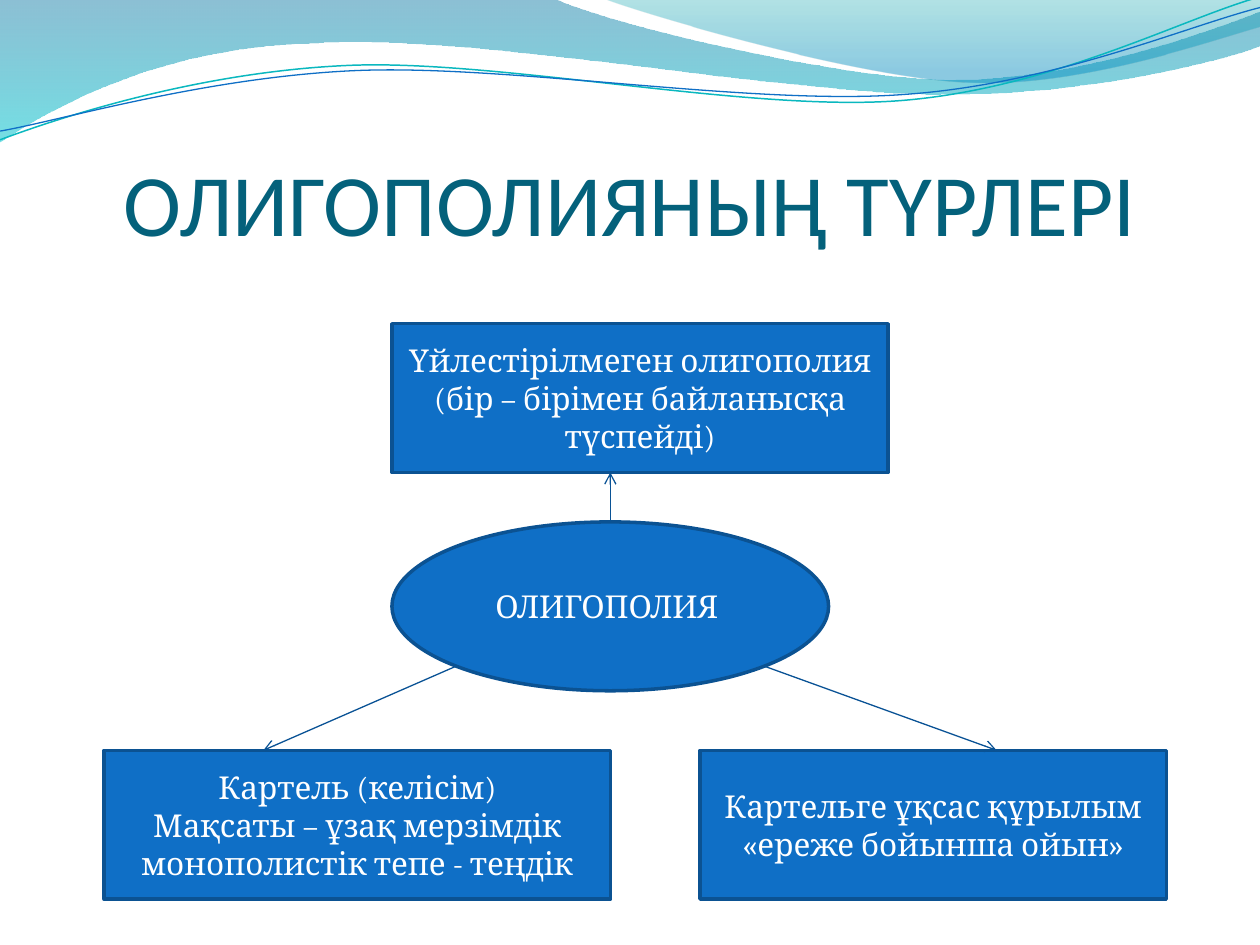
from dataclasses import dataclass

from pptx import Presentation
from pptx.dml.color import RGBColor
from pptx.enum.shapes import MSO_CONNECTOR, MSO_SHAPE
from pptx.enum.text import MSO_ANCHOR, MSO_AUTO_SIZE, PP_ALIGN
from pptx.oxml.ns import qn
from pptx.util import Pt
from lxml import etree

RECTANGLE, OVAL = MSO_SHAPE.RECTANGLE, MSO_SHAPE.OVAL
STRAIGHT = MSO_CONNECTOR.STRAIGHT
CENTER = PP_ALIGN.CENTER
MIDDLE, BOTTOM = MSO_ANCHOR.MIDDLE, MSO_ANCHOR.BOTTOM
NO_AUTOFIT = MSO_AUTO_SIZE.NONE
TITLE_ONLY = 5


@dataclass(frozen=True)
class Theme:
    title_font: str = "Calibri"
    body_font: str = "Cambria"
    title_size: float = 50
    body_size: float = 18
    title_color: str = "04617B"
    text_color: str = "FFFFFF"
    node_fill: str = "0F6FC6"
    node_line: str = "0B5292"
    node_line_width: float = 2
    arrow_color: str = "095295"
    arrow_width: float = 0.75


@dataclass(frozen=True)
class Stop:
    position: float
    color: str
    opacity: int


@dataclass(frozen=True)
class Wave:
    """Outline in points: pairs are straight segments, sextuples are Bézier curves."""
    start: tuple
    segments: tuple
    stops: tuple = ()
    line_color: str = ""
    line_width: float = 0


@dataclass(frozen=True)
class Node:
    kind: int
    box: tuple
    lines: tuple


THEME = Theme()

WAVES = (
    Wave((0, 0), ((316.8, -0.7), (342.7, 12.2, 478.1, 45.4, 545.8, 45.4),
                  (614.2, 45.4, 689.8, 18.7, 720, 6.5), (720.7, 25.9),
                  (707.8, 31.7, 626.4, 54.7, 537.1, 54),
                  (447.8, 54, 275, 20.2, 185, 24.5),
                  (92.9, 25.9, 33.1, 59.8, -0.7, 81.4), (0, 0)),
         stops=(Stop(0, "0074A1", 45), Stop(1, "00C6CF", 55))),
    Wave((344.9, -0.7), ((366.5, 7.9, 491, 44.6, 553.7, 46.8),
                         (616.3, 49.7, 691.9, 23, 720, 15.1), (720, 0),
                         (344.9, -0.7)),
         stops=(Stop(0, "00A1A9", 30), Stop(0.8, "008BBF", 45))),
    Wave((0, 79.9), ((34.6, 67, 113.8, 41, 199.4, 37.4),
                     (284.4, 33.8, 427, 64.1, 513.4, 57.6),
                     (599.8, 51.1, 675.4, 10.8, 718.6, -1.4)),
         line_color="0AB8BF", line_width=0.85),
    Wave((0, 74.9), ((33.8, 69.1, 118.1, 43.9, 203.8, 40.3),
                     (290.2, 36.7, 429.8, 60.5, 516.2, 54),
                     (601.9, 48.2, 677.5, 15.1, 720, 4.3)),
         line_color="0F6FC6", line_width=0.75),
)

CENTRE = Node(OVAL, (224, 298.25, 249.5, 96.5), ("ОЛИГОПОЛИЯ ",))
UPPER_TYPE = Node(RECTANGLE, (224, 185, 283.5, 85),
                  ("Үйлестірілмеген олигополия (бір – бірімен байланысқа түспейді)",))
LOWER_TYPES = (
    Node(RECTANGLE, (59.5, 428.75, 289.5, 85),
         ("Картель (келісім)", "Мақсаты – ұзақ мерзімдік монополистік тепе - теңдік")),
    Node(RECTANGLE, (400, 428.75, 266.5, 85),
         ("Картельге ұқсас құрылым", "«ереже бойынша ойын»")),
)
TOP_ARROW = (348.75, 298.25, 348.75, 270)
LOWER_ARROWS = ((260.5, 380.75, 150.5, 428.75), (437, 380.75, 569.5, 428.75))


def rgb(color: str) -> RGBColor:
    return RGBColor.from_string(color)


def apply_format(target, values: dict) -> None:
    for name, value in values.items():
        setattr(target, name, value)


def format_line(line, color: str, width: float) -> None:
    line.color.rgb = rgb(color)
    line.width = Pt(width)


def write_lines(frame, lines: tuple, font_name: str, size: float, color: str) -> None:
    for index, text in enumerate(lines):
        paragraph = frame.add_paragraph() if index else frame.paragraphs[0]
        paragraph.alignment = CENTER
        run = paragraph.add_run()
        run.text = text
        apply_format(run.font, {"name": font_name, "size": Pt(size)})
        run.font.color.rgb = rgb(color)


def build_outline(slide, wave: Wave):
    """Lay down every point as a line, then merge each curve's three lines."""
    points = [(Pt(segment[i]), Pt(segment[i + 1]))
              for segment in wave.segments for i in range(0, len(segment), 2)]
    builder = slide.shapes.build_freeform(*map(Pt, wave.start))
    builder.add_line_segments(points, close=bool(wave.stops))
    shape = builder.convert_to_shape()
    lines = iter(list(shape._element.iter(qn("a:lnTo"))))
    for segment in wave.segments:
        first = next(lines)
        if len(segment) == 6:
            first.tag = qn("a:cubicBezTo")
            for _ in range(2):
                extra = next(lines)
                first.append(extra[0])
                extra.getparent().remove(extra)
    return shape


def draw_wave(slide, wave: Wave) -> None:
    shape = build_outline(slide, wave)
    shape.shadow.inherit = False
    if not wave.stops:
        shape.fill.background()
        format_line(shape.line, wave.line_color, wave.line_width)
        return
    shape.line.fill.background()
    shape.fill.gradient()
    shape.fill.gradient_angle = 270
    for target, stop in zip(shape.fill.gradient_stops, wave.stops):
        target.position = stop.position
        target.color.rgb = rgb(stop.color)
    colors = shape._element.spPr.iter(qn("a:srgbClr"))
    for color, stop in zip(colors, wave.stops):
        etree.SubElement(color, qn("a:alpha"), val=str(stop.opacity * 1000))


def draw_node(slide, node: Node):
    shape = slide.shapes.add_shape(node.kind, *map(Pt, node.box))
    shape.shadow.inherit = False
    shape.fill.solid()
    shape.fill.fore_color.rgb = rgb(THEME.node_fill)
    format_line(shape.line, THEME.node_line, THEME.node_line_width)
    apply_format(shape.text_frame, {"word_wrap": True, "vertical_anchor": MIDDLE})
    write_lines(shape.text_frame, node.lines, THEME.body_font, THEME.body_size,
                THEME.text_color)
    return shape


def draw_arrow(slide, ends: tuple):
    connector = slide.shapes.add_connector(STRAIGHT, *map(Pt, ends))
    format_line(connector.line, THEME.arrow_color, THEME.arrow_width)
    properties = connector._element.spPr
    etree.SubElement(properties.find(qn("a:ln")), qn("a:tailEnd"), type="arrow")
    etree.SubElement(properties, qn("a:effectLst"))
    return connector


def draw_title(slide, text: str) -> None:
    title = slide.shapes.title
    apply_format(title, {"left": Pt(36), "top": Pt(55),
                         "width": Pt(648), "height": Pt(90)})
    apply_format(title.text_frame, {
        "margin_left": 0, "margin_right": 0, "margin_top": Pt(3.6), "margin_bottom": 0,
        "word_wrap": True, "auto_size": NO_AUTOFIT, "vertical_anchor": BOTTOM})
    write_lines(title.text_frame, (text,), THEME.title_font, THEME.title_size,
                THEME.title_color)


def main() -> None:
    presentation = Presentation()
    apply_format(presentation, {"slide_width": Pt(720), "slide_height": Pt(540)})
    slide = presentation.slides.add_slide(presentation.slide_layouts[TITLE_ONLY])

    # Wavy header and title
    for wave in WAVES:
        draw_wave(slide, wave)
    draw_title(slide, "ОЛИГОПОЛИЯНЫҢ ТҮРЛЕРІ")

    # Central term and its types
    draw_node(slide, UPPER_TYPE)
    centre = draw_node(slide, CENTRE)
    for node in LOWER_TYPES:
        draw_node(slide, node)

    # Arrows from the term to each type
    draw_arrow(slide, TOP_ARROW).begin_connect(centre, 0)
    for ends in LOWER_ARROWS:
        draw_arrow(slide, ends)

    presentation.save("out.pptx")


if __name__ == "__main__":
    main()
